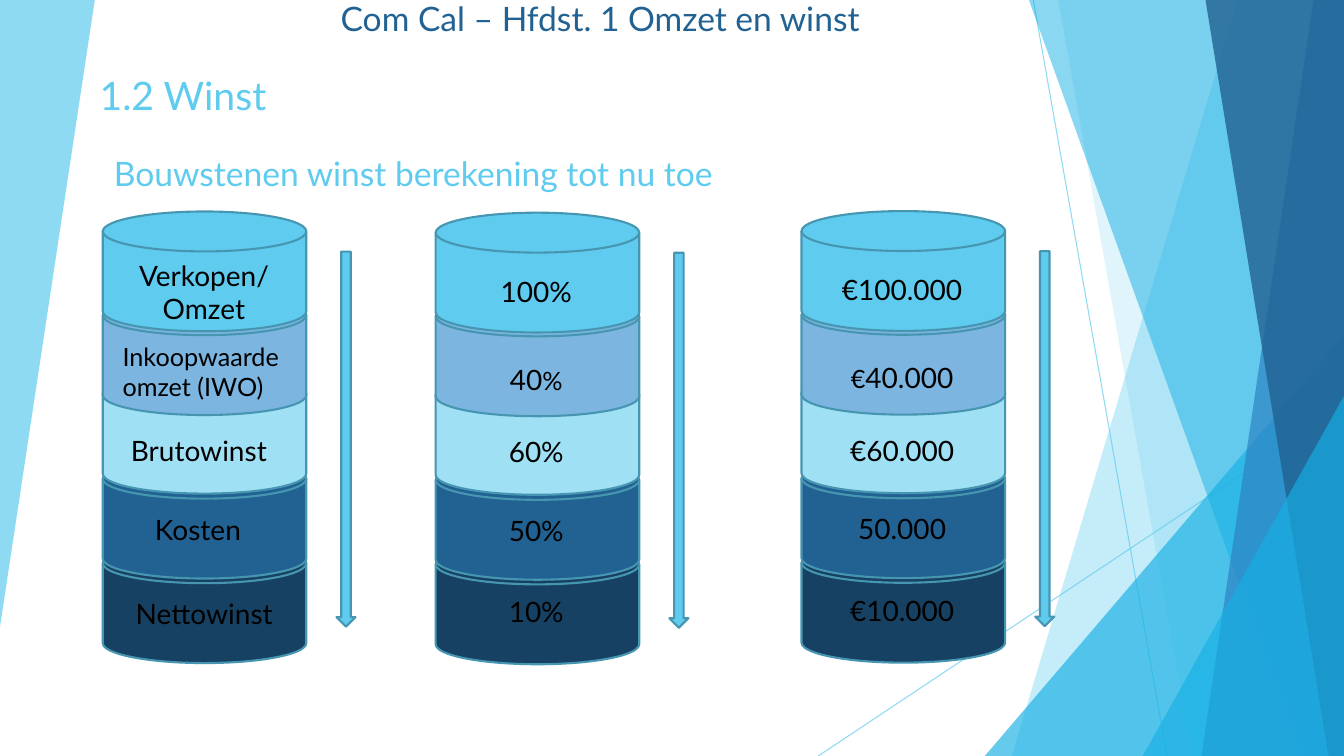
from lxml import etree
from pptx import Presentation
from pptx import util as u
from pptx.dml.color import RGBColor
from pptx.enum import shapes, text
from pptx.oxml import ns

SKY = RGBColor(0x5F, 0xCB, 0xEF)
CYAN = RGBColor(0x17, 0xB0, 0xE4)
BLUE = RGBColor(0x2E, 0x83, 0xC3)
DEEP = RGBColor(0x22, 0x62, 0x92)
NAVY = RGBColor(0x17, 0x41, 0x62)
SOFT = RGBColor(0x7C, 0xB5, 0xE0)
PALE = RGBColor(0x9F, 0xE0, 0xF5)
EDGE = RGBColor(0x46, 0x96, 0xB1)
BLACK = RGBColor(0, 0, 0)
WIDE, HIGH = 33.87, 19.05
LEFT, MID = text.PP_ALIGN.LEFT, text.PP_ALIGN.CENTER
KIND = shapes.MSO_SHAPE

RAYS = [((26.04, 0), (29.41, HIGH)), ((WIDE, 10.24), (20.62, HIGH))]
PANES = [
    ("band", 31.19, 25.5, SKY, 36),
    ("band", 26.67, 30.05, SKY, 20),
    ("wedge", 24.82, 8.46, CYAN, 66),
    ("band", 25.93, 32.79, CYAN, 50),
    ("band", 33.1, 30.28, BLUE, 70),
    ("band", 30.38, 33.48, DEEP, 80),
    ("wedge", 28.8, 9.98, CYAN, 66),
]
HEADS = [
    ("1.2 Winst", (2.26, 1.68, 13.87, 1.45), dict(size=28, color=SKY)),
    ("Com Cal – Hfdst. 1 Omzet en winst", (0.15, 0, 29.95, 1.09),
     dict(size=24, color=DEEP, align=MID, low=True)),
    ("Bouwstenen winst berekening tot nu toe", (2.62, 3.73, 24.13, 1.27),
     dict(size=24, color=SKY)),
]
LAYERS = [(5.33, SKY), (7.44, SOFT), (9.42, PALE), (11.56, DEEP), (13.69, NAVY)]
NAMES = [
    ("Verkopen/Omzet", (0.58, 6.38, 3.94, 1.96), dict(align=MID)),
    ("Inkoopwaarde omzet (IWO)", (0.25, 8.48, 4.57, 1.8), dict(size=18)),
    ("Brutowinst", (0.46, 10.8, 3.94, 1.12), {}),
    ("Kosten", (0.43, 12.8, 3.94, 1.12), dict(align=MID)),
    ("Nettowinst", (0.58, 14.91, 4.32, 1.12), {}),
]
TOPS = [6.76, 8.97, 10.8, 12.78, 14.83]
SHARES = ["100%", [("40", 20), ("%", 18)], "60%", "50%", "10%"]
SUMS = ["€100.000", [("€", 18), ("40.000", 20)], "€60.000", "50.000", "€10.000"]


def values(words):
    return [(word, (0.25, top, 4.57, 1.12), dict(align=MID))
            for word, top in zip(words, TOPS)]


STACKS = [(2.59, 0, NAMES), (10.98, 0.03, values(SHARES)), (20.2, -0.01, values(SUMS))]

deck = Presentation()
deck.slide_width, deck.slide_height = u.Cm(WIDE), u.Cm(HIGH)
slide = deck.slides.add_slide(deck.slide_layouts[6])
tree = slide.shapes


def cm(nums):
    return [u.Cm(num) for num in nums]


def fade(fill, alpha):
    tone = fill._xPr.find(".//" + ns.qn("a:srgbClr"))
    etree.SubElement(tone, ns.qn("a:alpha"), val=str(alpha * 1000))


def paint(shape, color, alpha=None):
    shape.shadow.inherit = False
    shape.fill.solid()
    shape.fill.fore_color.rgb = color
    if alpha:
        fade(shape.fill, alpha)
        shape.line.fill.background()
    else:
        shape.line.color.rgb = EDGE
        shape.line.width = u.Pt(1.5)


def outline(points):
    first, *rest = [cm(point) for point in points]
    form = tree.build_freeform(*first, scale=1.0)
    form.add_line_segments(rest, close=True)
    return form.convert_to_shape()


def write(words, box, size=20, color=BLACK, align=LEFT, low=False):
    frame = tree.add_textbox(*cm(box)).text_frame
    frame.word_wrap = True
    if low:
        frame.vertical_anchor = text.MSO_ANCHOR.BOTTOM
    else:
        frame.auto_size = text.MSO_AUTO_SIZE.SHAPE_TO_FIT_TEXT
    para = frame.paragraphs[0]
    para.alignment = align
    parts = [(words, size)] if isinstance(words, str) else words
    for part, points in parts:
        run = para.add_run()
        run.text = part
        run.font.name = "Lato"
        run.font.size = u.Pt(points)
        run.font.color.rgb = color


paint(outline([(0, 0), (2.39, 0), (0, 15.8)]), SKY, 70)
for start, end in RAYS:
    ray = tree.add_connector(shapes.MSO_CONNECTOR.STRAIGHT, *cm(start + end))
    ray.line.color.rgb = SKY
    ray.line.width = u.Pt(0.75)
    fade(ray.line.fill, 70)
    etree.SubElement(ray._element.spPr, ns.qn("a:effectLst"))

for kind, a, b, color, alpha in PANES:
    if kind == "band":
        pane = outline([(a, 0), (WIDE, 0), (WIDE, HIGH), (b, HIGH)])
    else:
        pane = tree.add_shape(KIND.ISOSCELES_TRIANGLE, *cm((a, b, WIDE - a, HIGH - b)))
        pane.adjustments[0] = 1
    paint(pane, color, alpha)

for words, box, style in HEADS:
    write(words, box, **style)

for left, shift, labels in STACKS:
    for (top, color), label in reversed(list(zip(LAYERS, labels))):
        disk = tree.add_shape(KIND.FLOWCHART_MAGNETIC_DISK,
                              *cm((left, top + shift, 5.13, 3.02)))
        paint(disk, color)
        words, (dx, y, width, height), style = label
        write(words, (left + dx, y + shift, width, height), **style)
    arrow = tree.add_shape(KIND.DOWN_ARROW, *cm((left + 5.89, 6.34 + shift, 0.48, 9.45)))
    paint(arrow, SKY)

deck.save("out.pptx")
